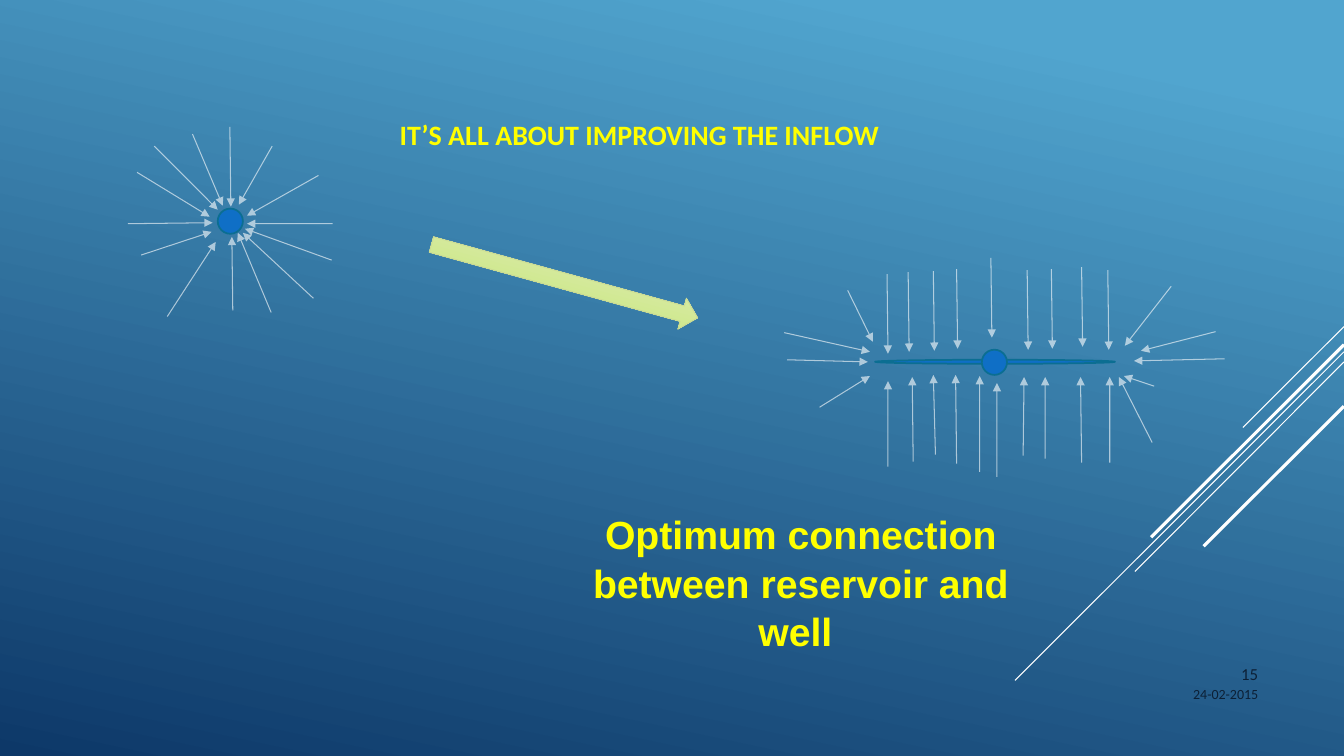
from dataclasses import dataclass

from lxml.etree import SubElement
from pptx import Presentation
from pptx.dml.color import RGBColor
from pptx.enum.shapes import MSO_CONNECTOR, MSO_SHAPE
from pptx.enum.text import MSO_ANCHOR, MSO_AUTO_SIZE, PP_ALIGN
from pptx.oxml.ns import qn
from pptx.shapes.autoshape import Shape
from pptx.slide import Slide
from pptx.text.text import TextFrame
from pptx.util import Pt

WHITE = RGBColor(0xFF, 0xFF, 0xFF)
YELLOW = RGBColor(0xFF, 0xFF, 0x00)
NAVY = RGBColor(0x0C, 0x20, 0x36)
SKY = RGBColor(0x51, 0xA5, 0xCF)
DEEP_BLUE = RGBColor(0x0D, 0x38, 0x68)
WELL_BLUE = RGBColor(0x0F, 0x6F, 0xC6)
WELL_EDGE = RGBColor(0x0B, 0x6E, 0x92)
PALE_GREEN = RGBColor(0xE4, 0xEE, 0xC3)
LIME = RGBColor(0xC1, 0xE4, 0x6A)
ARROW_EDGE = RGBColor(0xC5, 0xD3, 0x93)


@dataclass
class Line:
    x1: float
    y1: float
    x2: float
    y2: float
    width: float = 0.75


@dataclass
class Area:
    left: float
    top: float
    width: float
    height: float


@dataclass
class Label:
    text: str
    area: Area
    size: float
    font: str = "Calibri"
    color: RGBColor = NAVY
    bold: bool = False
    align: PP_ALIGN = PP_ALIGN.RIGHT
    anchor: MSO_ANCHOR = MSO_ANCHOR.TOP
    line_spacing: float = 1.0
    inset: tuple[float, float] = (7.2, 3.6)


TITLE = Label("IT’S ALL ABOUT IMPROVING THE INFLOW", Area(213.8, 80.6, 486, 44.6), 20,
              color=YELLOW, bold=True, align=PP_ALIGN.CENTER)
LABELS = [
    Label("15", Area(815.8, 439.2, 90, 52.6), 12, anchor=MSO_ANCHOR.BOTTOM),
    Label("Optimum connection between reservoir and well ", Area(397.4, 360, 349.2, 107.3), 28,
          font="Arial", color=YELLOW, bold=True, align=PP_ALIGN.CENTER, line_spacing=1.04,
          inset=(5, 2.9)),
    Label("24-02-2015", Area(779.8, 486, 126, 28.8), 10),
]
CORNER_STRIPES = [
    Line(960, 233.3, 887.8, 305.3),
    Line(960, 251.3, 725, 486),
    Line(960, 258.5, 810.7, 408.2),
    Line(960, 246.2, 822.2, 383.8, 2.25),
    Line(960, 290.2, 859.7, 390.2, 2.25),
]
RADIAL_INFLOW = [
    Line(110.2, 104.4, 155.5, 149.8), Line(100.8, 182.2, 151.2, 165.6),
    Line(97.9, 123.1, 149.8, 154.8), Line(91.4, 159.8, 151.9, 159.1),
    Line(137.5, 95.8, 159.1, 146.9), Line(193.7, 223.2, 169.9, 166.3),
    Line(164.2, 90.7, 164.9, 147.6), Line(166.3, 221.8, 165.6, 169.2),
    Line(194.4, 104.4, 170.6, 146.2), Line(237.6, 159.8, 176.4, 159.8),
    Line(227.5, 125.3, 176.4, 154.1), Line(223.9, 213.1, 173.5, 166.3),
    Line(119.5, 226.1, 154.1, 172.8), Line(236.9, 185.8, 175, 163.4),
]
FROM_ABOVE_STARTS = [
    (633.6, 195.8), (648.7, 194.4), (666.7, 193.7), (683.3, 192.2), (707.8, 184.3),
    (733.7, 193), (751, 192.2), (772.6, 190.8), (791.3, 193),
]
INFLOW_FROM_ABOVE = [Line(x, y, x + 0.7, y + 56.9) for x, y in FROM_ABOVE_STARTS]
INFLOW_FROM_BELOW = [
    Line(634.3, 333.4, 634.3, 272.2), Line(652.3, 329.8, 651.6, 269.3),
    Line(668.2, 324.7, 666.7, 267.8), Line(683.3, 331.2, 682.6, 267.8),
    Line(699.8, 337, 699.8, 268.6), Line(712.1, 340.6, 712.1, 273.6),
    Line(730.8, 325.4, 731.5, 269.3), Line(746.6, 327.6, 746.6, 269.3),
    Line(772.6, 330.5, 771.8, 269.3), Line(792.7, 330.5, 792.7, 269.3),
]
INFLOW_AT_ENDS = [
    Line(562.3, 257, 619.9, 258.5), Line(585.4, 290.9, 621.4, 268.6),
    Line(605.5, 207.4, 623.5, 244.1), Line(560.2, 237.6, 621.4, 251.3),
    Line(836.6, 204.5, 803.5, 247), Line(824.4, 275.8, 802.8, 268.6),
    Line(874.8, 256.3, 810, 257.8), Line(823, 316.1, 799.2, 269.3),
    Line(868.3, 236.9, 815, 250.6),
]
VERTICAL_WELL = Area(155.5, 149, 18, 18)
HORIZONTAL_WELL = Area(625, 257, 171.4, 2.9)
WELL_HEAD = Area(701.3, 249.8, 18, 18)
TRANSITION = Area(304.6, 189.4, 197.3, 23)


def set_alpha(color_format_parent, percent: int) -> None:
    """Make the solid colour of a line element partly transparent."""
    color = color_format_parent.find(".//" + qn("a:srgbClr"))
    SubElement(color, qn("a:alpha"), val=str(percent * 1000))


def draw_line(page: Slide, line: Line, is_flow: bool = False) -> None:
    connector = page.shapes.add_connector(
        MSO_CONNECTOR.STRAIGHT, Pt(line.x1), Pt(line.y1), Pt(line.x2), Pt(line.y2))
    connector.line.color.rgb = WHITE
    connector.line.width = Pt(line.width)
    properties = connector._element.spPr
    if is_flow:
        set_alpha(properties, 60)
        SubElement(connector.line._get_or_add_ln(), qn("a:tailEnd"), type="triangle")
    SubElement(properties, qn("a:effectLst"))


def add_shape(page: Slide, kind: MSO_SHAPE, area: Area, edge: RGBColor, width: float) -> Shape:
    shape = page.shapes.add_shape(
        kind, Pt(area.left), Pt(area.top), Pt(area.width), Pt(area.height))
    shape.shadow.inherit = False
    shape.line.color.rgb = edge
    shape.line.width = Pt(width)
    return shape


def draw_well(page: Slide, area: Area) -> None:
    well = add_shape(page, MSO_SHAPE.OVAL, area, WELL_EDGE, 1.25)
    well.fill.solid()
    well.fill.fore_color.rgb = WELL_BLUE


def set_gradient(fill, stops: list[tuple[float, RGBColor]], angle: float) -> None:
    fill.gradient()
    fill.gradient_angle = angle
    for stop, (position, color) in zip(fill.gradient_stops, stops):
        stop.position = position
        stop.color.rgb = color


def draw_transition(page: Slide) -> None:
    arrow = add_shape(page, MSO_SHAPE.RIGHT_ARROW, TRANSITION, ARROW_EDGE, 0.75)
    arrow.rotation = 15.4
    set_gradient(arrow.fill, [(0, PALE_GREEN), (1, LIME)], 270)
    set_alpha(arrow.line._get_or_add_ln(), 60)


def write_label(frame: TextFrame, label: Label) -> None:
    frame.word_wrap = True
    frame.auto_size = MSO_AUTO_SIZE.NONE
    frame.vertical_anchor = label.anchor
    frame.margin_left = frame.margin_right = Pt(label.inset[0])
    frame.margin_top = frame.margin_bottom = Pt(label.inset[1])
    para = frame.paragraphs[0]
    para.text = label.text
    para.alignment = label.align
    para.line_spacing = label.line_spacing
    para.space_before = Pt(0)
    para.font.name = label.font
    para.font.size = Pt(label.size)
    para.font.bold = label.bold
    para.font.color.rgb = label.color


def draw_label(page: Slide, label: Label) -> None:
    area = label.area
    box = page.shapes.add_textbox(Pt(area.left), Pt(area.top), Pt(area.width), Pt(area.height))
    write_label(box.text_frame, label)


def place_title(page: Slide) -> None:
    title, area = page.shapes.title, TITLE.area
    title.left, title.top = Pt(area.left), Pt(area.top)
    title.width, title.height = Pt(area.width), Pt(area.height)
    write_label(title.text_frame, TITLE)


def main() -> None:
    deck = Presentation()
    deck.slide_width, deck.slide_height = Pt(960), Pt(540)
    page = deck.slides.add_slide(deck.slide_layouts[5])
    set_gradient(page.background.fill, [(0.1, SKY), (1, DEEP_BLUE)], 258)
    for stripe in CORNER_STRIPES:
        draw_line(page, stripe)
    place_title(page)
    for label in LABELS:
        draw_label(page, label)
    for well in (HORIZONTAL_WELL, VERTICAL_WELL, WELL_HEAD):
        draw_well(page, well)
    for flow in RADIAL_INFLOW + INFLOW_FROM_ABOVE + INFLOW_FROM_BELOW + INFLOW_AT_ENDS:
        draw_line(page, flow, is_flow=True)
    draw_transition(page)
    deck.save("out.pptx")


if __name__ == "__main__":
    main()
